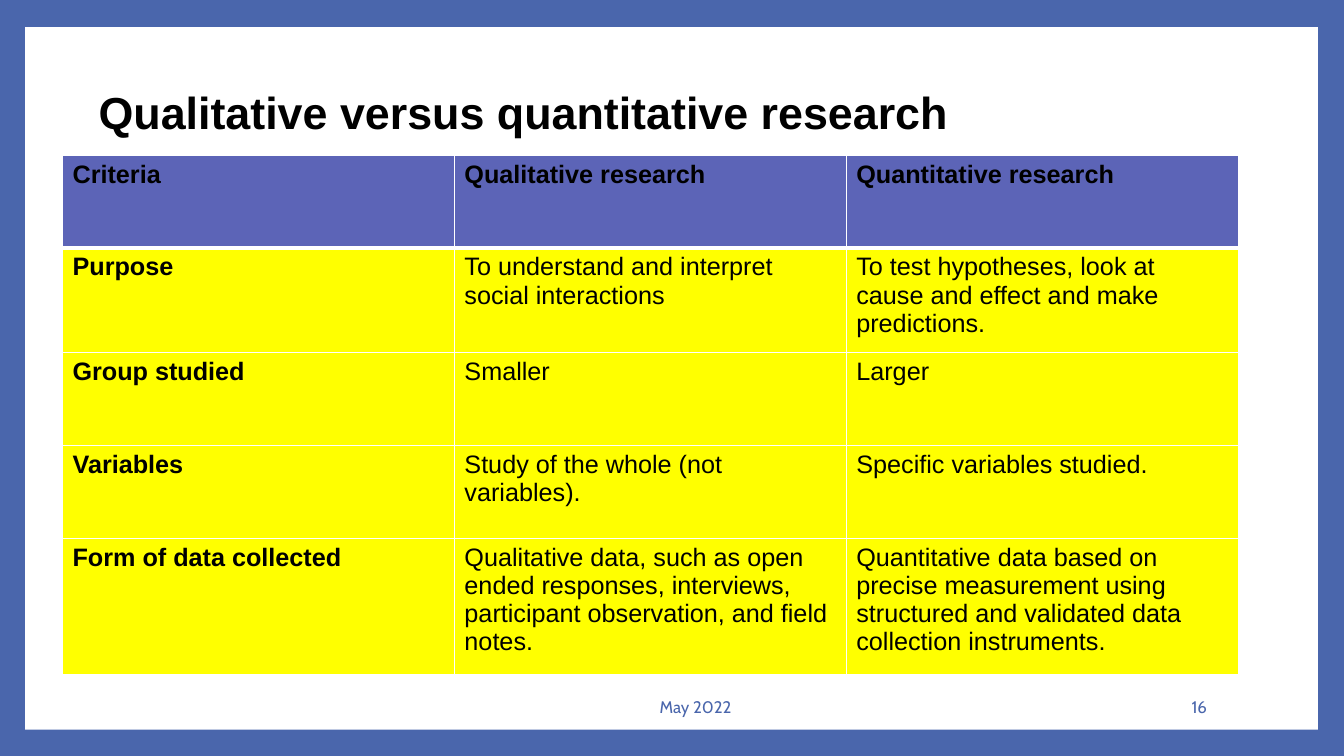
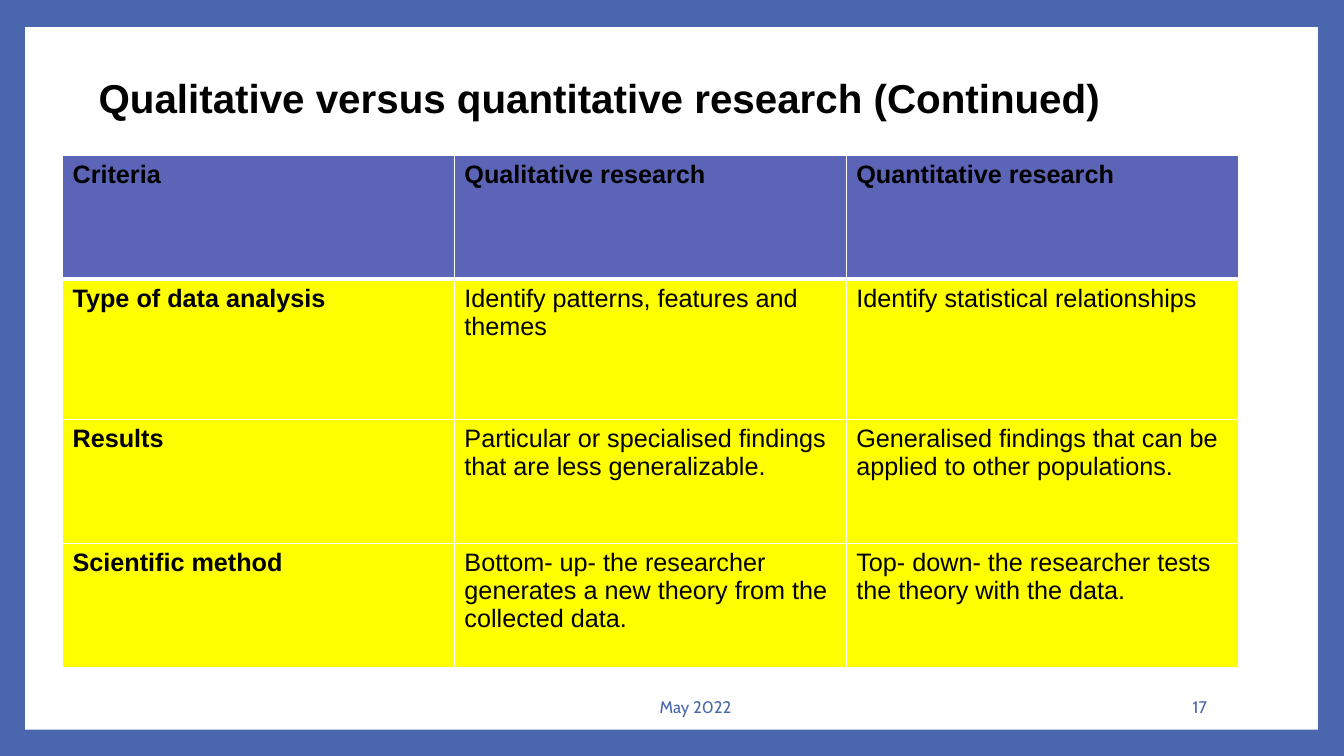
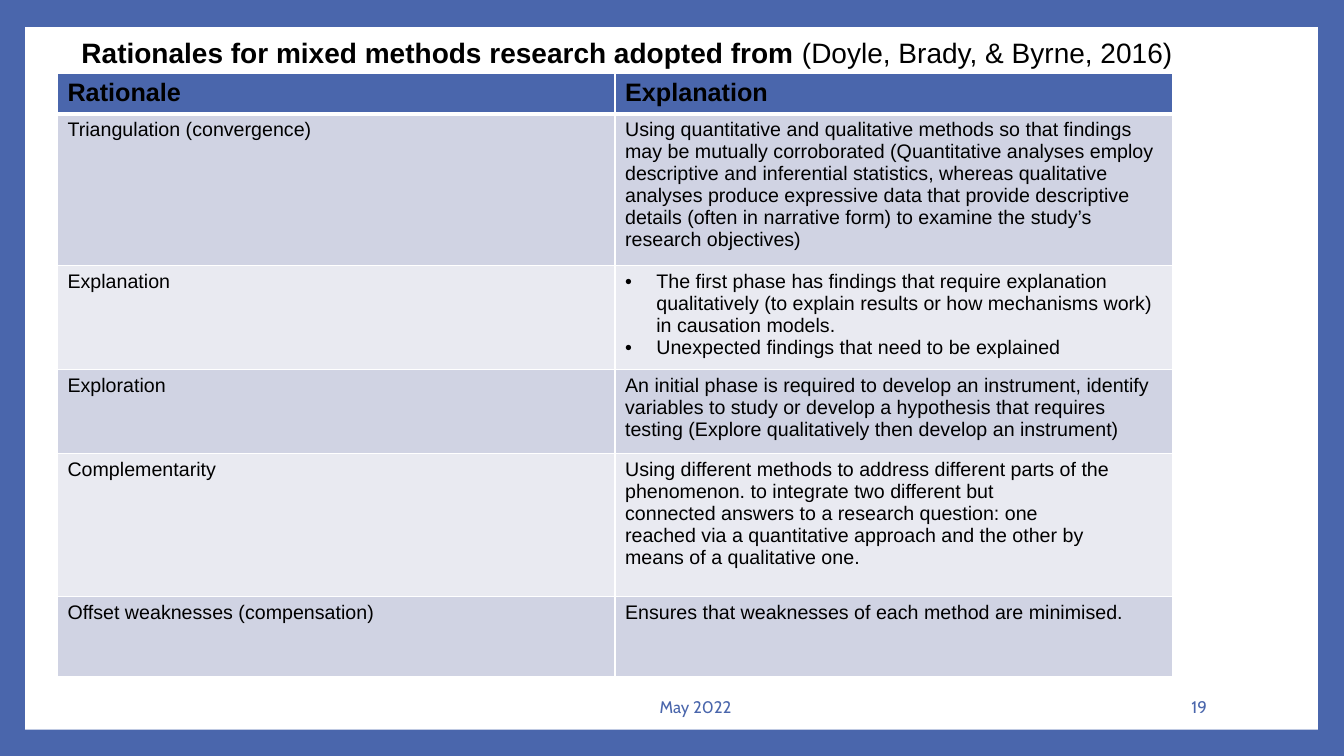
from pptx import Presentation
from pptx.util import Inches, Pt
from pptx.dml.color import RGBColor
from pptx.enum.shapes import MSO_SHAPE
from pptx.enum.text import MSO_ANCHOR, PP_ALIGN
from lxml.etree import SubElement
from pptx.oxml.ns import qn

BLUE, WHITE, BLACK = "4A66AC", "FFFFFF", "000000"
VIOLET, YELLOW, GREY, PALE = "5C64B7", "FFFF00", "D0D3E3", "E9EAF1"
HEADS = ["Criteria", "Qualitative research", "Quantitative research"]


def paint(fill, color):
    fill.solid()
    fill.fore_color.rgb = RGBColor.from_string(color)


def write(para, text, size, bold=False, color=BLACK, face="Arial"):
    run = para.add_run()
    run.text = text
    run.font.size = Pt(size)
    run.font.bold = bold
    run.font.name = face
    paint(run.font.fill, color)


pages = [
    {
        "number": "16",
        "title": [("Qualitative versus quantitative research", True)],
        "size": 32, "box": (0.88, 0.65, 11.2, 0.99),
        "at": (0.62, 1.54), "width": 11.66, "high": [0.92, 1.04, 0.92, 0.92, 1.35],
        "head": VIOLET, "bands": [YELLOW], "text": 18, "strong": True,
        "rows": [
            HEADS,
            ["Purpose", "To understand and interpret social interactions",
             "To test hypotheses, look at cause and effect and make predictions."],
            ["Group studied", "Smaller", "Larger"],
            ["Variables", "Study of the whole (not variables).",
             "Specific variables studied."],
            ["Form of data collected",
             "Qualitative data, such as open ended responses, interviews, "
             "participant observation, and field notes.",
             "Quantitative data based on precise measurement using structured "
             "and validated data collection instruments."],
        ],
    },
    {
        "number": "17",
        "title": [("Qualitative versus quantitative research (Continued)", True)],
        "size": 28.8, "box": (0.88, 0.65, 11.2, 0.69),
        "at": (0.62, 1.54), "width": 11.66, "high": [1.23, 1.39, 1.23, 1.23],
        "head": VIOLET, "bands": [YELLOW], "text": 18, "strong": True,
        "rows": [
            HEADS,
            ["Type of data analysis", "Identify patterns, features and themes",
             "Identify statistical relationships"],
            ["Results", "Particular or specialised findings that are less generalizable.",
             "Generalised findings that can be applied to other populations."],
            ["Scientific method",
             "Bottom- up- the researcher generates a new theory from the collected data.",
             "Top- down- the researcher tests the theory with the data."],
        ],
    },
    {
        "number": "19",
        "title": [("Rationales for mixed methods research adopted from ", True),
                  ("(Doyle, Brady, & Byrne, 2016)", False)],
        "size": 20, "box": (0.71, 0.36, 12.06, 0.37),
        "at": (0.57, 0.73), "width": 11.06, "high": [0.38, 1.42, 0.98, 0.83, 1.42, 0.8],
        "head": BLUE, "bands": [GREY, PALE], "text": 14, "strong": False,
        "rows": [
            ["Rationale", "Explanation"],
            ["Triangulation (convergence)",
             "Using quantitative and qualitative methods so that findings may be "
             "mutually corroborated (Quantitative analyses employ descriptive and "
             "inferential statistics, whereas qualitative analyses produce expressive "
             "data that provide descriptive details (often in narrative form) to "
             "examine the study’s research objectives)"],
            ["Explanation",
             "• The first phase has findings that require explanation qualitatively "
             "(to explain results or how mechanisms work) in causation models.\n"
             "• Unexpected findings that need to be explained"],
            ["Exploration",
             "An initial phase is required to develop an instrument, identify "
             "variables to study or develop a hypothesis that requires testing "
             "(Explore qualitatively then develop an instrument)"],
            ["Complementarity",
             "Using different methods to address different parts of the phenomenon. "
             "to integrate two different but\n"
             "connected answers to a research question: one\n"
             "reached via a quantitative approach and the other by\n"
             "means of a qualitative one."],
            ["Offset weaknesses (compensation)",
             "Ensures that weaknesses of each method are minimised."],
        ],
    },
]

deck = Presentation()
deck.slide_width, deck.slide_height = Inches(13.33), Inches(7.5)
paint(deck.slide_master.background.fill, BLUE)

for page in pages:
    slide = deck.slides.add_slide(deck.slide_layouts[6])
    panel = slide.shapes.add_shape(
        MSO_SHAPE.RECTANGLE, Inches(0.25), Inches(0.27), Inches(12.82), Inches(6.97))
    panel.shadow.inherit = False
    paint(panel.fill, WHITE)
    panel.line.fill.background()

    labels = [
        (page["box"], page["title"], page["size"], BLACK, "Arial", PP_ALIGN.LEFT),
        ((10.2, 6.81, 1.87, 0.4), [(page["number"], False)], 12, BLUE, "Cabin", PP_ALIGN.RIGHT),
        ((4.32, 6.81, 5.16, 0.4), [("May 2022", False)], 12, BLUE, "Cabin", PP_ALIGN.CENTER),
    ]
    for box, runs, size, color, face, align in labels:
        frame = slide.shapes.add_textbox(*map(Inches, box)).text_frame
        frame.word_wrap = True
        frame.vertical_anchor = MSO_ANCHOR.MIDDLE
        para = frame.paragraphs[0]
        para.alignment = align
        para.line_spacing = 0.9 if face == "Arial" else 1.0
        for text, bold in runs:
            write(para, text, size, bold, color, face)

    rows, high = page["rows"], page["high"]
    count = len(rows[0])
    left, top = page["at"]
    table = slide.shapes.add_table(
        len(rows), count, Inches(left), Inches(top),
        Inches(page["width"]), Inches(sum(high))).table
    table.horz_banding = False
    for r, texts in enumerate(rows):
        table.rows[r].height = Inches(high[r])
        bands = page["bands"]
        tint = bands[(r - 1) % len(bands)] if r else page["head"]
        for c, text in enumerate(texts):
            cell = table.cell(r, c)
            props = cell._tc.get_or_add_tcPr()
            for side in "LRTB":
                thick = (r == 0 and side == "B") or (r == 1 and side == "T")
                edge = SubElement(props, qn("a:ln" + side), w=str(Pt(3 if thick else 1)))
                SubElement(SubElement(edge, qn("a:solidFill")), qn("a:srgbClr"), val=WHITE)
            paint(cell.fill, tint)
            bold = r == 0 or (c == 0 and page["strong"])
            size = page["text"] if r else 18
            for i, line in enumerate(text.split("\n")):
                frame = cell.text_frame
                para = frame.add_paragraph() if i else frame.paragraphs[0]
                if line.startswith("• "):
                    form = para._p.get_or_add_pPr()
                    form.set("marL", str(Inches(0.31)))
                    form.set("indent", str(-Inches(0.31)))
                    SubElement(form, qn("a:buFont"), typeface="Arial")
                    SubElement(form, qn("a:buChar"), char="•")
                write(para, line.removeprefix("• "), size, bold)

deck.save("out.pptx")
